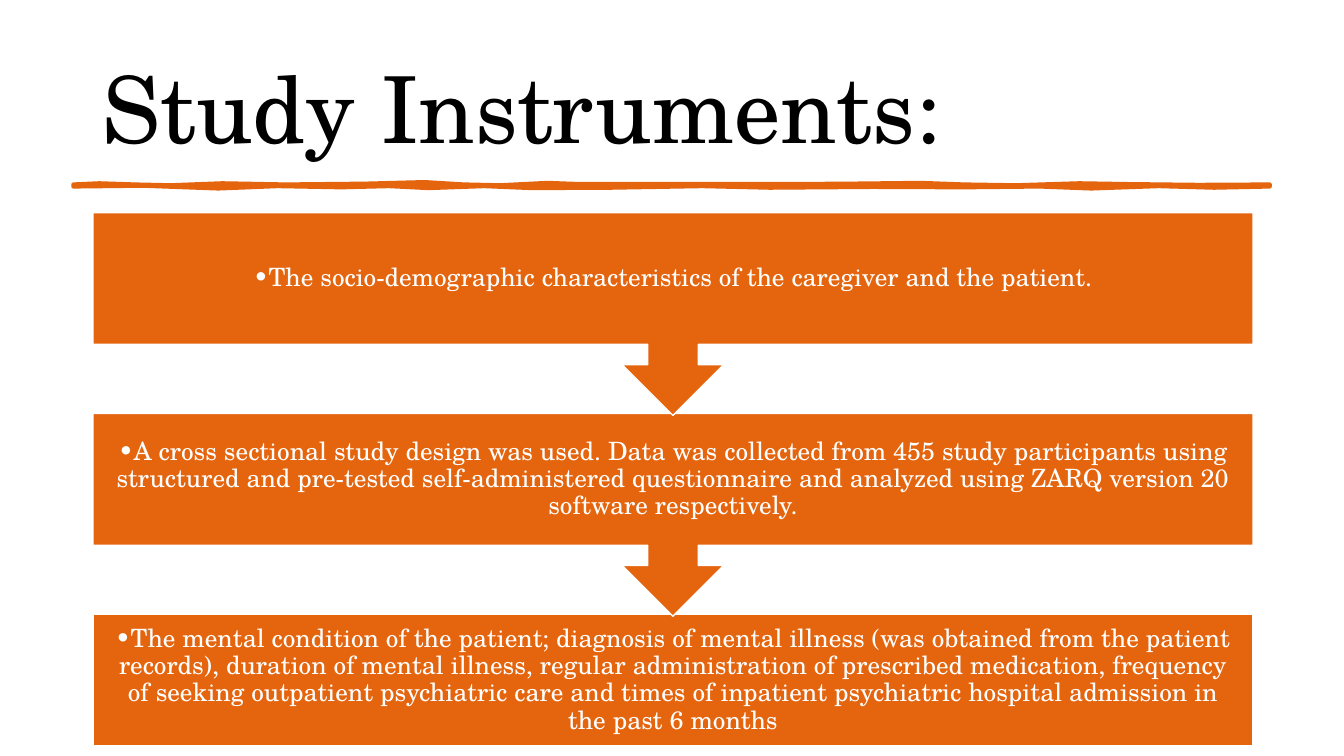
from dataclasses import dataclass
from pptx import Presentation
from pptx.dml.color import RGBColor
from pptx.enum.shapes import MSO_SHAPE
from pptx.enum.text import MSO_ANCHOR, PP_ALIGN
from pptx.util import Cm, Pt

TITLE = "Study Instruments:"
STEPS = [
    "•The socio-demographic characteristics of the caregiver and the patient.",
    "•A cross sectional study design was used. Data was collected from 455 study participants "
    "using structured and pre-tested self-administered questionnaire and analyzed using "
    "ZARQ version 20 software respectively.",
    "•The mental condition of the patient; diagnosis of mental illness (was obtained from the "
    "patient records), duration of mental illness, regular administration of prescribed "
    "medication, frequency of seeking outpatient psychiatric care and times of inpatient "
    "psychiatric hospital admission in the past 6 months",
]
STROKE_TOP = [
    (1.85, 4.65), (2.5, 4.62), (3.4, 4.65), (4.3, 4.67), (5.6, 4.62), (7.2, 4.65),
    (9.2, 4.63), (10.7, 4.59), (11.7, 4.65), (12.6, 4.67), (13.8, 4.61), (14.6, 4.64),
    (17.6, 4.64), (19.8, 4.64), (21.4, 4.63), (23.2, 4.61), (24.3, 4.65), (25.6, 4.67),
    (27.2, 4.62), (28.4, 4.64), (30.2, 4.66), (32, 4.65),
]
STROKE_BOTTOM = [
    (32, 4.7), (30.6, 4.73), (29.2, 4.69), (27.5, 4.75), (26.2, 4.7), (24.3, 4.72),
    (22, 4.71), (19.4, 4.73), (17.7, 4.69), (15.4, 4.73), (13.4, 4.74), (12.2, 4.69),
    (10.8, 4.74), (9.8, 4.69), (8.6, 4.72), (7, 4.69), (5.5, 4.75), (3.6, 4.68), (1.85, 4.7),
]


@dataclass(frozen=True)
class Theme:
    font: str = "TeX Gyre Schola"
    orange: RGBColor = RGBColor(0xE4, 0x65, 0x0E)
    white: RGBColor = RGBColor(0xFF, 0xFF, 0xFF)
    black: RGBColor = RGBColor(0, 0, 0)
    title_size: int = 66
    body_size: int = 18


THEME = Theme()
LEFT, WIDTH = 2.34, 29.24
FIRST_TOP, PITCH = 5.36, 5.06
BODY_HEIGHT, CALLOUT_HEIGHT = 3.32, 5.11


def write_text(shape, text, *, size, color, align=PP_ALIGN.LEFT, inset=0.25):
    frame = shape.text_frame
    frame.word_wrap = True
    frame.vertical_anchor = MSO_ANCHOR.MIDDLE
    frame.margin_left = frame.margin_right = Cm(inset)
    frame.margin_top = frame.margin_bottom = Cm(inset)
    para = frame.paragraphs[0]
    para.alignment = align
    para.line_spacing = 0.9
    span = para.add_run()
    span.text = text
    span.font.name = THEME.font
    span.font.size = Pt(size)
    span.font.color.rgb = color


def paint(shape, line_color, line_width):
    shape.shadow.inherit = False
    shape.fill.solid()
    shape.fill.fore_color.rgb = THEME.orange
    shape.line.color.rgb = line_color
    shape.line.width = Pt(line_width)


def add_stroke(page):
    points = [(Cm(x), Cm(y)) for x, y in STROKE_TOP + STROKE_BOTTOM]
    builder = page.shapes.build_freeform(*points[0])
    builder.add_line_segments(points[1:], close=True)
    paint(builder.convert_to_shape(), THEME.orange, 3)


def add_step(page, index, text):
    is_last = index == len(STEPS) - 1
    kind = MSO_SHAPE.RECTANGLE if is_last else MSO_SHAPE.DOWN_ARROW_CALLOUT
    height = BODY_HEIGHT if is_last else CALLOUT_HEIGHT
    box = page.shapes.add_shape(
        kind, Cm(LEFT), Cm(FIRST_TOP + index * PITCH), Cm(WIDTH), Cm(height))
    paint(box, THEME.white, 1)
    write_text(box, text, size=THEME.body_size, color=THEME.white,
               align=PP_ALIGN.CENTER, inset=0.36)


def main():
    deck = Presentation()
    deck.slide_width, deck.slide_height = Cm(33.87), Cm(19.05)
    page = deck.slides.add_slide(deck.slide_layouts[6])
    page.background.fill.solid()
    page.background.fill.fore_color.rgb = THEME.white
    add_stroke(page)
    title = page.shapes.add_textbox(Cm(LEFT), Cm(1.02), Cm(29.21), Cm(3.68))
    write_text(title, TITLE, size=THEME.title_size, color=THEME.black)
    for index, text in reversed(list(enumerate(STEPS))):
        add_step(page, index, text)
    deck.save("out.pptx")


if __name__ == "__main__":
    main()
